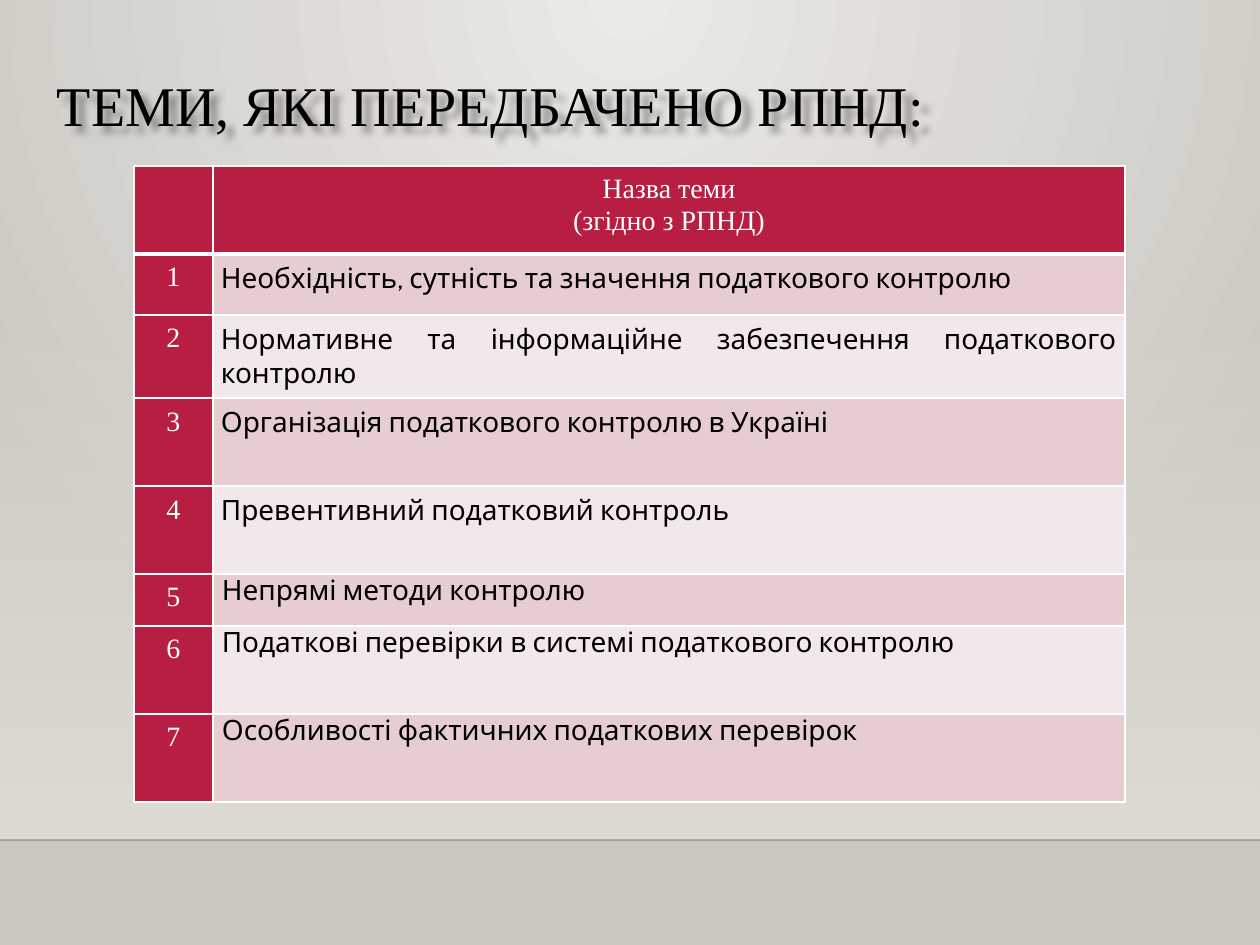
"""Build the slide that lists the course topics in a table."""
import pptx
import pptx.dml.color
import pptx.enum.shapes
import pptx.enum.text
import pptx.oxml
import pptx.oxml.ns
import pptx.util

RGB = pptx.dml.color.RGBColor
ALIGN = pptx.enum.text.PP_ALIGN
BLACK, WHITE = RGB(0, 0, 0), RGB(255, 255, 255)
RED = RGB(0xB7, 0x1E, 0x42)
BANDS = [RGB(0xE6, 0xCD, 0xCF), RGB(0xF3, 0xE8, 0xE9)]
GLOW, EDGE = RGB(0xEC, 0xEA, 0xE7), RGB(0xCA, 0xC7, 0xC1)
WALL, RULE = RGB(0xDF, 0xDB, 0xD5), RGB(0, 0, 1)

TITLE = "ТЕМИ, ЯКІ ПЕРЕДБАЧЕНО РПНД:"
HEADER = ["Назва теми", "(згідно з РПНД)"]
TOPICS = [
    "Необхідність, сутність та значення податкового контролю",
    "Нормативне та інформаційне забезпечення податкового контролю",
    "Організація податкового контролю в Україні",
    "Превентивний податковий контроль",
    "Непрямі методи контролю",
    "Податкові перевірки в системі податкового контролю",
    "Особливості фактичних податкових перевірок",
]
COLS = [79, 912]
ROWS = [88, 61, 59, 88, 88, 52, 88, 88]
FIRST_TIGHT_ROW = 5
PAD, TIGHT_PAD = (8, 8, 8, 8), (9, 0, 9, 0)
SERIF = {"name": "Times New Roman", "size": pptx.util.Pt(16), "bold": False}
SANS = {**SERIF, "name": "Cabin"}
TITLE_FONT = {**SERIF, "size": pptx.util.Pt(32)}
SIDES = ("left", "top", "right", "bottom")


def px(n):
    return pptx.util.Emu(n * 914400 // 126)


def xml(tag, attrs="", inner=""):
    ns = pptx.oxml.ns.nsdecls("a")
    return pptx.oxml.parse_xml(f"<a:{tag} {ns} {attrs}>{inner}</a:{tag}>")


def set_gradient(fill, colors, direction):
    fill.gradient()
    for stop, color in zip(fill.gradient_stops, colors):
        stop.color.rgb = color
    for stop, position in zip(fill.gradient_stops, (0, 1)):
        stop.position = position
    grad = fill._xPr.find(pptx.oxml.ns.qn("a:gradFill"))
    grad.replace(grad.find(pptx.oxml.ns.qn("a:lin")), direction)
    return grad


def set_alpha(element, percent):
    element.find(".//" + pptx.oxml.ns.qn("a:srgbClr")).append(
        xml("alpha", f'val="{percent * 1000}"'))


def write(tf, lines, font, color, align):
    for i, line in enumerate(lines):
        p = tf.paragraphs[0] if i == 0 else tf.add_paragraph()
        p.alignment = align
        r = p.add_run()
        r.text = line
        for name, value in font.items():
            setattr(r.font, name, value)
        r.font.color.rgb = color


def set_margins(target, margins):
    for side, margin in zip(SIDES, margins):
        setattr(target, f"margin_{side}", px(margin))


def format_cell(cell, fill, margins, bottom_width):
    set_margins(cell, margins)
    cell.fill.solid()
    cell.fill.fore_color.rgb = fill
    widths = {"lnL": 1, "lnR": 1, "lnT": 1, "lnB": bottom_width}
    for i, (tag, width) in enumerate(widths.items()):
        cell._tc.get_or_add_tcPr().insert(i, xml(
            tag, f'w="{width * 12700}"',
            f'<a:solidFill><a:srgbClr val="{WHITE}"/></a:solidFill>'))


def add_backdrop(s):
    set_gradient(s.background.fill, (GLOW, EDGE), xml(
        "path", 'path="circle"', '<a:fillToRect l="43000" r="43000" b="100000"/>'))
    wall = s.shapes.add_shape(pptx.enum.shapes.MSO_SHAPE.RECTANGLE,
                              0, px(277), px(1260), px(563))
    wall.shadow.inherit = False
    wall.line.fill.background()
    set_alpha(set_gradient(wall.fill, (WALL, WALL), xml("lin", 'ang="5400000"')), 0)
    rule = s.shapes.add_connector(pptx.enum.shapes.MSO_CONNECTOR.STRAIGHT,
                                  0, px(840), px(1260), px(840))
    rule.line.width = pptx.util.Pt(1)
    rule.line.color.rgb = RULE
    sp_pr = rule._element.spPr
    set_alpha(sp_pr, 20)
    sp_pr.append(xml("effectLst"))


def add_title(s):
    box = s.shapes.add_textbox(px(44), px(66), px(1043), px(89))
    tf = box.text_frame
    tf.word_wrap = True
    set_margins(tf, (13, 12, 13, 6))
    write(tf, [TITLE], TITLE_FONT, BLACK, ALIGN.LEFT)
    tf.paragraphs[0].line_spacing = 0.9
    box._element.spPr.append(xml(
        "effectLst", "",
        '<a:outerShdw blurRad="50800" dist="63500" dir="2700000" algn="tl">'
        '<a:srgbClr val="000000"><a:alpha val="40000"/></a:srgbClr></a:outerShdw>'))


def add_topics(s):
    table = s.shapes.add_table(len(ROWS), len(COLS), px(134), px(166),
                               px(sum(COLS)), px(sum(ROWS))).table
    for column, width in zip(table.columns, COLS):
        column.width = px(width)
    for row, height in zip(table.rows, ROWS):
        row.height = px(height)
    for cell in table.rows[0].cells:
        format_cell(cell, RED, PAD, 3)
    write(table.cell(0, 1).text_frame, HEADER, SERIF, WHITE, ALIGN.CENTER)
    for i, topic in enumerate(TOPICS, 1):
        number, name = table.rows[i].cells
        format_cell(number, RED, PAD, 1)
        write(number.text_frame, [str(i)], SERIF, WHITE, ALIGN.CENTER)
        format_cell(name, BANDS[(i - 1) % 2],
                    PAD if i < FIRST_TIGHT_ROW else TIGHT_PAD, 1)
        write(name.text_frame, [topic], SANS, BLACK, ALIGN.JUSTIFY)


def main():
    prs = pptx.Presentation()
    prs.slide_width, prs.slide_height = px(1260), px(945)
    s = prs.slides.add_slide(prs.slide_layouts[6])
    add_backdrop(s)
    add_title(s)
    add_topics(s)
    prs.save("out.pptx")


if __name__ == "__main__":
    main()
